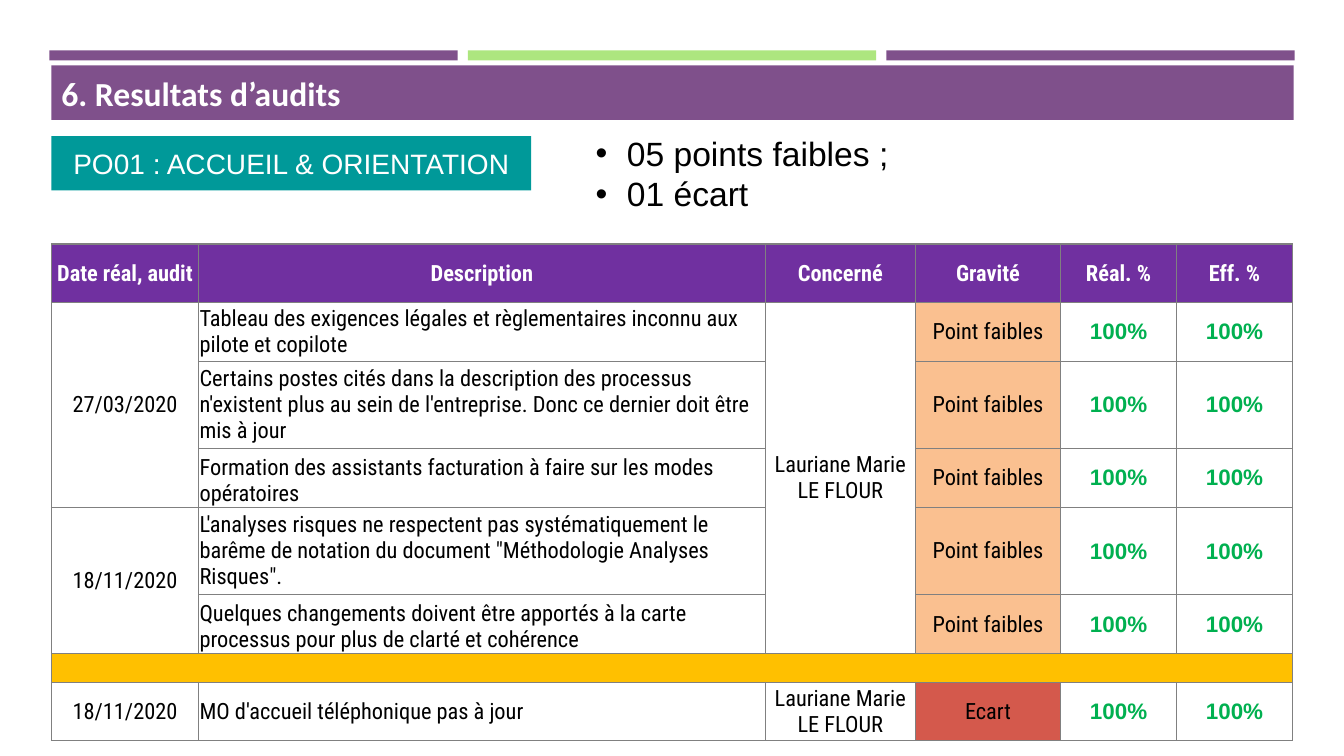
from typing import NamedTuple

from lxml import etree
from pptx import Presentation
from pptx.dml.color import RGBColor
from pptx.enum.shapes import MSO_SHAPE
from pptx.enum.text import MSO_ANCHOR, PP_ALIGN
from pptx.oxml.ns import qn
from pptx.util import Inches, Pt

RECT = MSO_SHAPE.RECTANGLE
LEFT, CENTER = PP_ALIGN.LEFT, PP_ALIGN.CENTER
MIDDLE, BOTTOM = MSO_ANCHOR.MIDDLE, MSO_ANCHOR.BOTTOM
COLORS = {
    "plum": "7F508B", "lime": "ADE67F", "teal": "009999", "violet": "7030A0",
    "peach": "FAC090", "red": "D4594C", "amber": "FFC000", "green": "00B050",
    "gray": "808080", "white": "FFFFFF", "black": "000000",
}
BODY = "Roboto Condensed"


class Bar(NamedTuple):
    left: float
    top: float
    width: float
    height: float
    color: str


class Finding(NamedTuple):
    date: str
    text: str
    owner: str
    grade: str
    color: str
    anchor: MSO_ANCHOR = MIDDLE


class Span(NamedTuple):
    top: int
    left: int
    bottom: int
    right: int


STRIPES = [Bar(0.49 + 4.15 * i, 0.5, 4.05, 0.1, color)
           for i, color in enumerate(("plum", "lime", "plum"))]
TITLE = Bar(0.51, 0.65, 12.32, 0.54, "plum")
TOPIC = Bar(0.51, 1.35, 4.76, 0.54, "teal")

HEADS = ["Date réal, audit", "Description", "Concerné", "Gravité", "Réal. %", "Eff. %"]
WIDTHS = [1.46, 5.62, 1.49, 1.44, 1.15, 1.15]
HEIGHTS = [0.58, 0.58, 0.87, 0.58, 0.87, 0.58, 0.29, 0.58]
OWNER, WEAK, RATE = "Lauriane Marie LE FLOUR", "Point faibles", "100%"
GAP = 6
FINDINGS = {
    1: Finding("27/03/2020", "Tableau des exigences légales et règlementaires inconnu "
               "aux pilote et copilote", OWNER, WEAK, "peach"),
    2: Finding("", "Certains postes cités dans la description des processus n'existent plus "
               "au sein de l'entreprise. Donc ce dernier doit être mis à jour",
               "", WEAK, "peach"),
    3: Finding("", "Formation des assistants facturation à faire sur les modes opératoires",
               "", WEAK, "peach", BOTTOM),
    4: Finding("18/11/2020", "L'analyses risques ne respectent pas systématiquement le barême "
               "de notation du document \"Méthodologie Analyses Risques\".",
               "", WEAK, "peach"),
    5: Finding("", "Quelques changements doivent être apportés à la carte processus pour plus "
               "de clarté et cohérence", "", WEAK, "peach", BOTTOM),
    7: Finding("18/11/2020", "MO d'accueil téléphonique pas à jour", OWNER, "Ecart", "red"),
}
SPANS = [Span(1, 0, 3, 0), Span(4, 0, 5, 0), Span(1, 2, 5, 2), Span(GAP, 0, GAP, 5)]


def rgb(name: str) -> RGBColor:
    return RGBColor.from_string(COLORS[name])


def write(para, text: str, *, size: int = 16, font: str = BODY, color: str = "black",
          bold: bool = False, align: PP_ALIGN = LEFT) -> None:
    para.alignment = align
    run = para.add_run()
    run.text = text
    run.font.size, run.font.name, run.font.bold = Pt(size), font, bold
    run.font.color.rgb = rgb(color)


def draw_bar(slide, bar: Bar):
    shape = slide.shapes.add_shape(RECT, *map(Inches, bar[:4]))
    shape.shadow.inherit = False
    shape.fill.solid()
    shape.fill.fore_color.rgb = rgb(bar.color)
    shape.line.fill.background()
    shape.text_frame.vertical_anchor = MIDDLE
    return shape


def add_bullet(para, indent: float) -> None:
    props = para._p.get_or_add_pPr()
    props.set("marL", str(Inches(indent)))
    props.set("indent", str(-Inches(indent)))
    etree.SubElement(props, qn("a:buFont"), typeface="Arial")
    etree.SubElement(props, qn("a:buChar"), char="•")


def draw_points(slide, points: list[str]) -> None:
    box = slide.shapes.add_textbox(*map(Inches, (5.81, 1.27, 4.4, 0.91)))
    frame = box.text_frame
    frame.word_wrap = True
    for i, point in enumerate(points):
        para = frame.add_paragraph() if i else frame.paragraphs[0]
        add_bullet(para, 0.31)
        write(para, point, size=24, font="Arial")


def set_edges(cell, row: int, col: int) -> None:
    """Draw thin cell borders, thicker along the outside of the table."""
    outer = {"L": col == 0, "R": col == len(WIDTHS) - 1,
             "T": row == 0, "B": row == len(HEIGHTS) - 1}
    props = cell._tc.get_or_add_tcPr()
    for side, thick in outer.items():
        line = etree.SubElement(props, qn(f"a:ln{side}"), w=str(Pt(1 if thick else 0.5)))
        fill = etree.SubElement(line, qn("a:solidFill"))
        etree.SubElement(fill, qn("a:srgbClr"), val=COLORS["gray"])


def set_cell(cell, text: str, *, fill: str = "", anchor: MSO_ANCHOR = MIDDLE,
             **style) -> None:
    cell.vertical_anchor = anchor
    cell.margin_left = cell.margin_right = cell.margin_top = Inches(0.01)
    cell.margin_bottom = 0
    if fill:
        cell.fill.solid()
        cell.fill.fore_color.rgb = rgb(fill)
    else:
        cell.fill.background()
    para = cell.text_frame.paragraphs[0]
    if text:
        write(para, text, **style)
    else:
        etree.SubElement(para._p, qn("a:endParaRPr"), sz="1600")


def draw_table(slide) -> None:
    frame = slide.shapes.add_table(len(HEIGHTS), len(WIDTHS), Inches(0.51), Inches(2.42),
                                   Inches(sum(WIDTHS)), Inches(sum(HEIGHTS)))
    table = frame.table
    table.first_row = table.horz_banding = False
    for col, width in zip(table.columns, WIDTHS):
        col.width = Inches(width)
    for i, height in enumerate(HEIGHTS):
        table.rows[i].height = Inches(height)
        for j in range(len(WIDTHS)):
            set_edges(table.cell(i, j), i, j)

    for j, head in enumerate(HEADS):
        set_cell(table.cell(0, j), head, fill="violet", color="white", bold=True, align=CENTER)
    for i, item in FINDINGS.items():
        set_cell(table.cell(i, 0), item.date, align=CENTER)
        set_cell(table.cell(i, 1), item.text, anchor=item.anchor)
        set_cell(table.cell(i, 2), item.owner, align=CENTER)
        set_cell(table.cell(i, 3), item.grade, fill=item.color, align=CENTER)
        for j in (4, 5):
            set_cell(table.cell(i, j), RATE, font="Arial", color="green", bold=True,
                     align=CENTER)
    for j in range(len(WIDTHS)):
        set_cell(table.cell(GAP, j), "", fill="amber")
    for span in SPANS:
        table.cell(span.top, span.left).merge(table.cell(span.bottom, span.right))


def main() -> None:
    deck = Presentation()
    deck.slide_width, deck.slide_height = Inches(13.33), Inches(7.5)
    slide = deck.slides.add_slide(deck.slide_layouts[6])
    for stripe in STRIPES:
        draw_bar(slide, stripe)
    title = draw_bar(slide, TITLE)
    write(title.text_frame.paragraphs[0], "6. Resultats d’audits", size=24,
          font="Calibri", color="white", bold=True)
    topic = draw_bar(slide, TOPIC)
    write(topic.text_frame.paragraphs[0], "PO01 : ACCUEIL & ORIENTATION", size=20,
          font="Arial", color="white", align=CENTER)
    draw_table(slide)
    draw_points(slide, ["05 points faibles ;", "01 écart"])
    deck.save("out.pptx")


if __name__ == "__main__":
    main()
